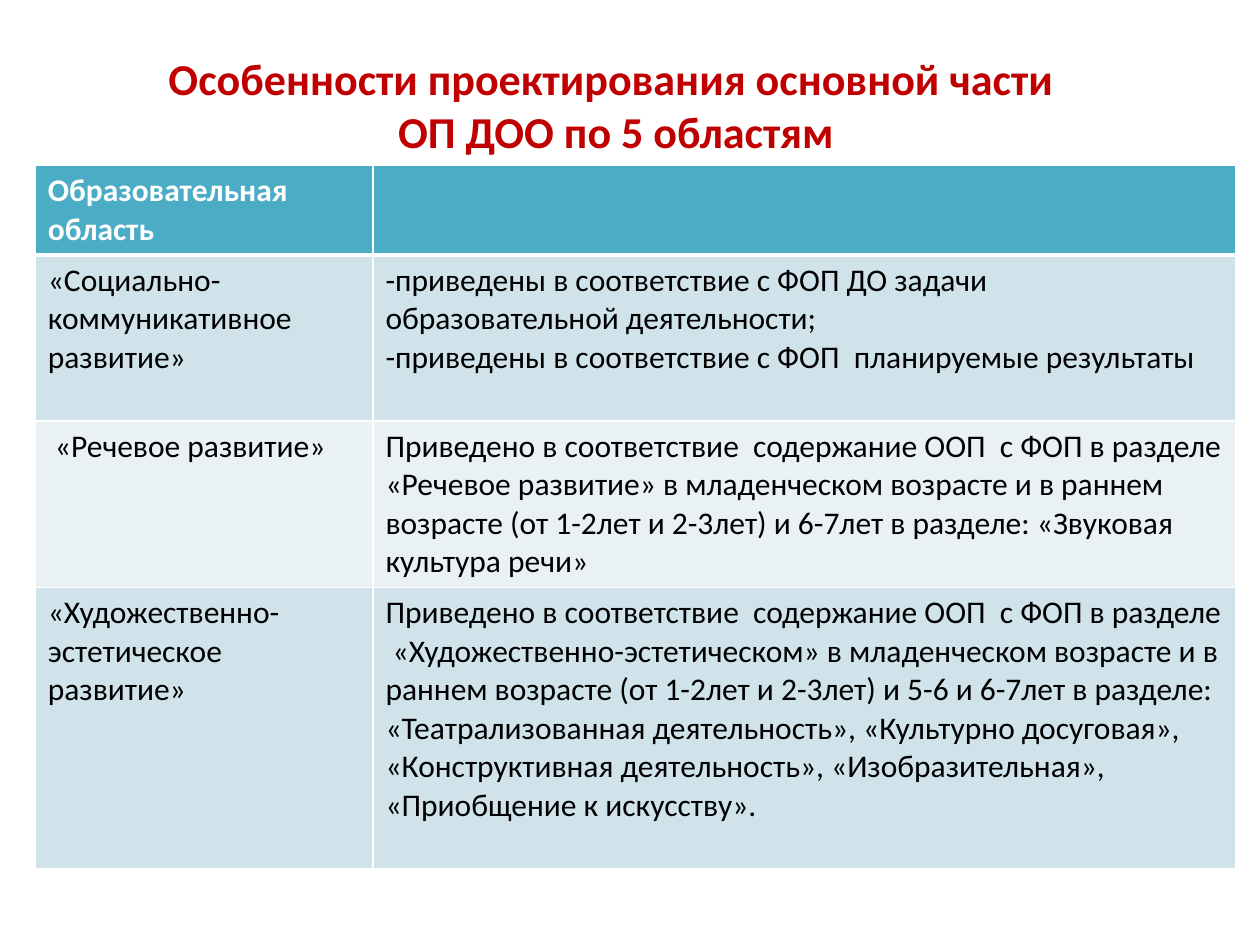
from lxml.etree import SubElement
from pptx import Presentation
from pptx.dml.color import RGBColor as Rgb
from pptx.enum.text import MSO_ANCHOR as Anchor, MSO_AUTO_SIZE as Fit, PP_ALIGN as Align
from pptx.oxml.ns import qn
from pptx.util import Inches, Pt

COLORS = {"title": "C00000", "head": "4BACC6", "odd": "D0E3EA",
          "even": "E9F1F5", "white": "FFFFFF", "ink": "000000"}
WIDE, HIGH = 10, 7.5

TITLE = "Особенности проектирования основной части\v ОП ДОО по 5 областям"
ROWS = [
    ("Образовательная область", ""),
    ("«Социально-коммуникативное развитие»",
     "-приведены в соответствие с ФОП ДО задачи образовательной деятельности;\n"
     "-приведены в соответствие с ФОП  планируемые результаты"),
    (" «Речевое развитие»",
     "Приведено в соответствие  содержание ООП  с ФОП в разделе «Речевое развитие» "
     "в младенческом возрасте и в раннем возрасте (от 1-2лет и 2-3лет) и 6-7лет "
     "в разделе: «Звуковая культура речи»"),
    ("«Художественно-эстетическое развитие»",
     "Приведено в соответствие  содержание ООП  с ФОП в разделе  "
     "«Художественно-эстетическом» в младенческом возрасте и в раннем возрасте "
     "(от 1-2лет и 2-3лет) и 5-6 и 6-7лет в разделе: «Театрализованная деятельность», "
     "«Культурно досуговая», «Конструктивная деятельность», «Изобразительная», "
     "«Приобщение к искусству»."),
]
COLS = (2.68, 6.85)
HEIGHTS = (0.7, 1.32, 1.32, 2.23)


def write(frame, text, size=18, color="ink", bold=False, align=Align.LEFT, font="Calibri"):
    frame.text = text
    for par in frame.paragraphs:
        par.alignment = align
        for run in par.runs:
            run.font.name, run.font.size, run.font.bold = font, Pt(size), bold
            run.font.color.rgb = Rgb.from_string(COLORS[color])


def edge(cell, **widths):
    """Draw white cell borders; widths are points by side, in schema order L, R, T, B."""
    props = cell._tc.get_or_add_tcPr()
    for spot, (side, width) in enumerate(widths.items()):
        line = SubElement(props, qn(f"a:ln{side}"), w=str(Pt(width)))
        fill = SubElement(line, qn("a:solidFill"))
        SubElement(fill, qn("a:srgbClr"), val=COLORS["white"])
        props.insert(spot, line)


class Deck:
    def __init__(self):
        self.show = Presentation()
        self.show.slide_width, self.show.slide_height = Inches(WIDE), Inches(HIGH)
        self.slide = self.show.slides.add_slide(self.show.slide_layouts[5])

    def box(self, left, top, width, height):
        """Turn shares of the slide's size into lengths."""
        return [Inches(share * full) for share, full in
                zip((left, top, width, height), (WIDE, HIGH, WIDE, HIGH))]

    def title(self, text, *area):
        shape = self.slide.shapes.title
        shape.left, shape.top, shape.width, shape.height = self.box(*area)
        frame = shape.text_frame
        frame.auto_size, frame.vertical_anchor = Fit.NONE, Anchor.MIDDLE
        write(frame, text, size=25.2, color="title", bold=True, align=Align.CENTER)

    def table(self, rows, cols, heights, left, top):
        area = self.box(left, top, sum(cols) / WIDE, sum(heights) / HIGH)
        table = self.slide.shapes.add_table(len(rows), len(cols), *area).table
        for col, width in zip(table.columns, cols):
            col.width = Inches(width)
        for r, (row, height) in enumerate(zip(rows, heights)):
            table.rows[r].height = Inches(height)
            head = r == 0
            tone = "head" if head else "odd" if r % 2 else "even"
            for c, text in enumerate(row):
                cell = table.cell(r, c)
                cell.fill.solid()
                cell.fill.fore_color.rgb = Rgb.from_string(COLORS[tone])
                edge(cell, L=1, R=1, T=3 if r == 1 else 1, B=3 if head else 1)
                write(cell.text_frame, text, color="white" if head else "ink", bold=head)


def main():
    deck = Deck()
    deck.title(TITLE, 0.035, 0.05, 0.9, 0.12)
    deck.table(ROWS, COLS, HEIGHTS, 0.028, 0.175)
    deck.show.save("out.pptx")


if __name__ == "__main__":
    main()
